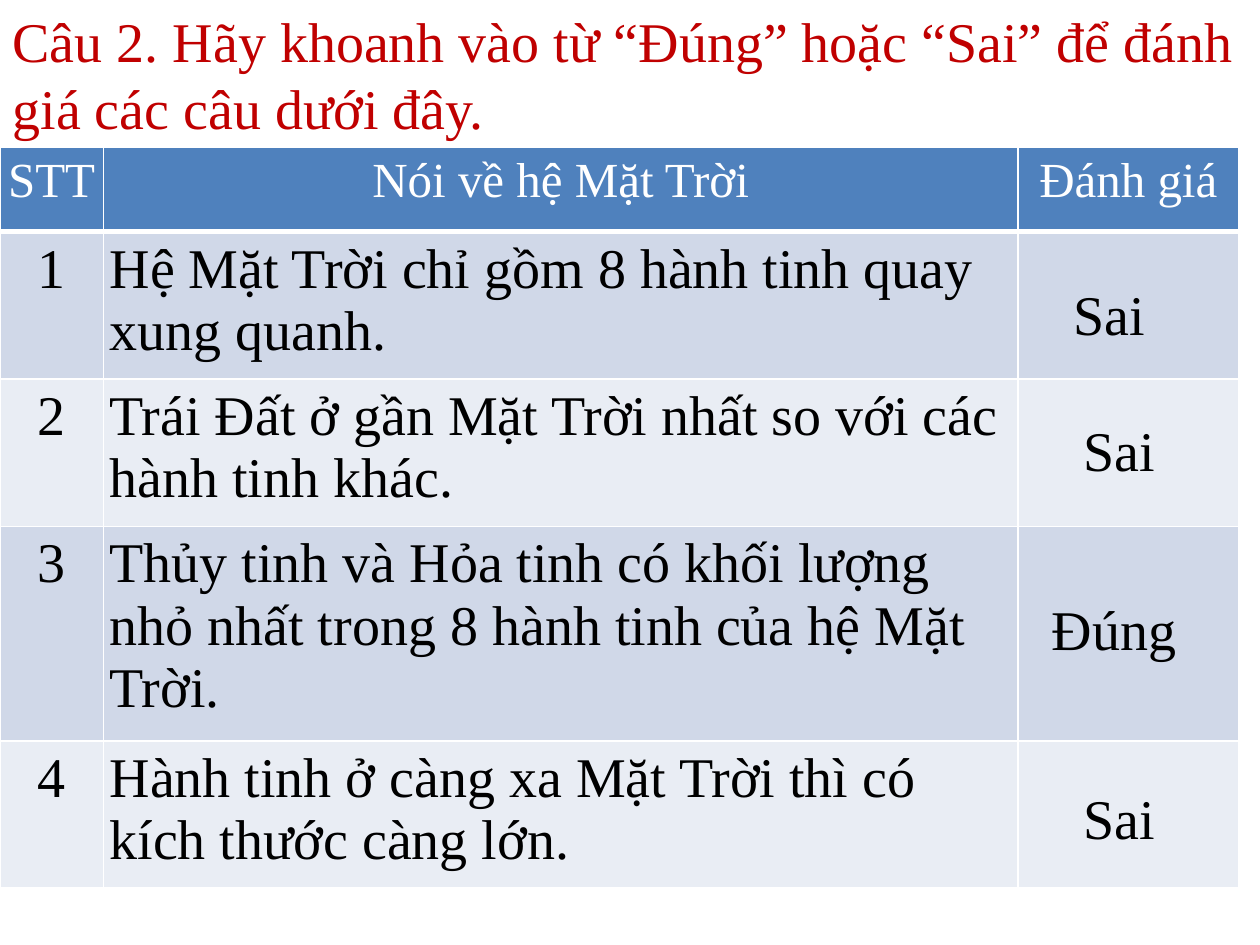
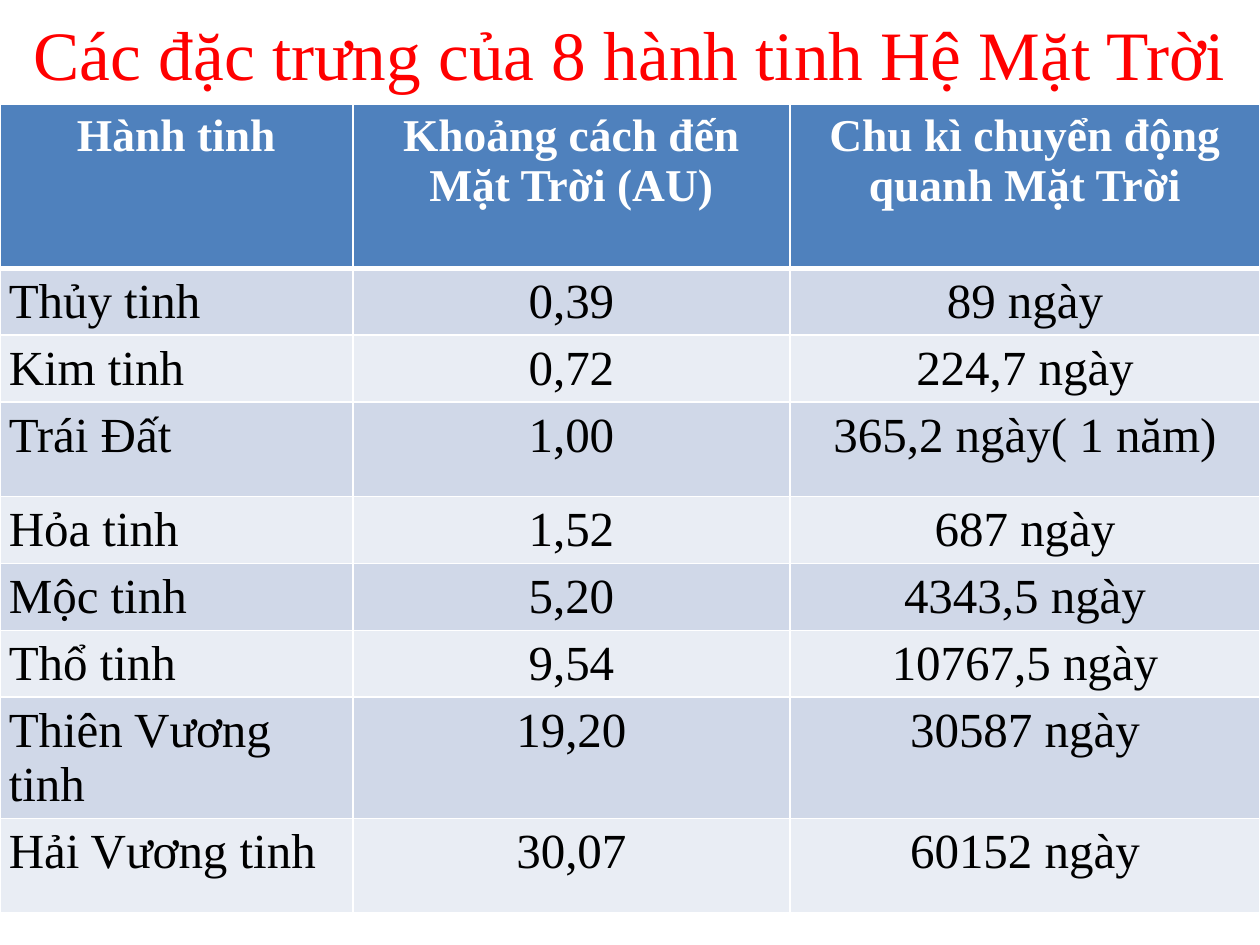
from lxml import etree
from pptx import Presentation
from pptx.dml.color import RGBColor
from pptx.enum.text import MSO_ANCHOR, MSO_AUTO_SIZE, PP_ALIGN
from pptx.oxml.ns import qn
from pptx.util import Inches, Pt

FONT = "Times New Roman"
COLORS = {
    "question": "C00000",
    "heading": "FF0000",
    "header": "4F81BD",
    "odd_row": "D0D8E8",
    "even_row": "E9EDF4",
    "white": "FFFFFF",
    "black": "000000",
}

STATEMENTS = [
    ("STT", "Nói về hệ Mặt Trời", "Đánh giá"),
    ("1", "Hệ Mặt Trời chỉ gồm 8 hành tinh quay xung quanh.", ""),
    ("2", "Trái Đất ở gần Mặt Trời nhất so với các hành tinh khác.", ""),
    ("3", "Thủy tinh và Hỏa tinh có khối lượng nhỏ nhất trong 8 hành tinh "
          "của hệ Mặt Trời.", ""),
    ("4", "Hành tinh ở càng xa Mặt Trời thì có kích thước càng lớn.", ""),
]
ANSWERS = [
    ("Sai", 8.42, 2.17, 0.89),
    ("Sai", 8.5, 3.25, 0.89),
    ("Đúng", 8.25, 4.67, 1.31),
    ("Sai", 8.5, 6.17, 0.89),
]
PLANETS = [
    ("Hành tinh", "Khoảng cách đến Mặt Trời (AU)", "Chu kì chuyển động quanh Mặt Trời"),
    ("Thủy tinh", "0,39", "89 ngày"),
    ("Kim tinh", "0,72", "224,7 ngày"),
    ("Trái Đất", "1,00", "365,2 ngày( 1 năm)"),
    ("Hỏa tinh", "1,52", "687 ngày"),
    ("Mộc tinh", "5,20", "4343,5 ngày"),
    ("Thổ tinh", "9,54", "10767,5 ngày"),
    ("Thiên Vương tinh", "19,20", "30587 ngày"),
    ("Hải Vương tinh", "30,07", "60152 ngày"),
]


def write_text(text_frame, text, size=32, color="black", bold=False, align=PP_ALIGN.LEFT):
    paragraph = text_frame.paragraphs[0]
    paragraph.alignment = align
    run = paragraph.add_run()
    run.text = text
    run.font.name = FONT
    run.font.size = Pt(size)
    run.font.bold = bold
    run.font.color.rgb = RGBColor.from_string(COLORS[color])


def place_title(slide, text, height, anchor, **text_format):
    title = slide.shapes.title
    title.left, title.top = Inches(0), Inches(0)
    title.width, title.height = Inches(10), Inches(height)
    title.text_frame.word_wrap = True
    title.text_frame.auto_size = MSO_AUTO_SIZE.NONE
    title.text_frame.vertical_anchor = anchor
    write_text(title.text_frame, text, **text_format)


def add_answer(slide, text, left, top, width):
    box = slide.shapes.add_textbox(Inches(left), Inches(top), Inches(width), Inches(0.64))
    box.text_frame.word_wrap = True
    write_text(box.text_frame, text)


def set_borders(cell, top, bottom):
    """Draw white cell borders; top and bottom are widths in points."""
    properties = cell._tc.get_or_add_tcPr()
    for side, width in (("L", 1), ("R", 1), ("T", top), ("B", bottom)):
        line = etree.SubElement(properties, qn(f"a:ln{side}"), w=str(Pt(width)))
        fill = etree.SubElement(line, qn("a:solidFill"))
        etree.SubElement(fill, qn("a:srgbClr"), val=COLORS["white"])


def add_banded_table(slide, rows, top, column_widths, row_heights, side_margin,
                     centred_columns, header_format, body_format):
    frame = slide.shapes.add_table(
        len(rows), len(column_widths), Inches(0), Inches(top),
        Inches(sum(column_widths)), Inches(sum(row_heights)))
    table = frame.table
    for column, width in zip(table.columns, column_widths):
        column.width = Inches(width)
    for row, height in zip(table.rows, row_heights):
        row.height = Inches(height)

    for row_index, values in enumerate(rows):
        is_header = row_index == 0
        band = "header" if is_header else "odd_row" if row_index % 2 else "even_row"
        text_format = header_format if is_header else body_format
        for column_index, value in enumerate(values):
            cell = table.cell(row_index, column_index)
            cell.margin_left = cell.margin_right = Inches(side_margin)
            cell.margin_top = cell.margin_bottom = Inches(0.05)
            set_borders(cell, top=3 if row_index == 1 else 1, bottom=3 if is_header else 1)
            cell.fill.solid()
            cell.fill.fore_color.rgb = RGBColor.from_string(COLORS[band])
            if value:
                centred = is_header or column_index in centred_columns
                write_text(cell.text_frame, value,
                           align=PP_ALIGN.CENTER if centred else PP_ALIGN.LEFT,
                           **text_format)


def build_question_slide(slide):
    place_title(slide, "Câu 2. Hãy khoanh vào từ “Đúng” hoặc “Sai” để đánh giá "
                       "các câu dưới đây.",
                height=1.78, anchor=MSO_ANCHOR.TOP, color="question")
    add_banded_table(
        slide, STATEMENTS, top=1.17, column_widths=[0.82, 7.26, 1.75],
        row_heights=[0.67, 1.17, 1.17, 1.7, 1.17], side_margin=0.05,
        centred_columns={0}, header_format={"size": 28, "color": "white"},
        body_format={"size": 32})
    for answer in ANSWERS:
        add_answer(slide, *answer)


def build_planet_slide(slide):
    place_title(slide, "Các đặc trưng của 8 hành tinh Hệ Mặt Trời", height=0.83,
                anchor=MSO_ANCHOR.MIDDLE, size=39.6, color="heading",
                align=PP_ALIGN.CENTER)
    single, spaced = 0.53, 0.75
    add_banded_table(
        slide, PLANETS, top=0.83, column_widths=[2.8, 3.47, 3.73],
        row_heights=[1.3, single, single, spaced, single, single, single, 0.96, spaced],
        side_margin=0.07, centred_columns={1, 2},
        header_format={"size": 26, "color": "white", "bold": True},
        body_format={"size": 28})


def main():
    presentation = Presentation()
    presentation.slide_width = Inches(10)
    presentation.slide_height = Inches(7.5)
    title_only = presentation.slide_layouts[5]
    for build_slide in (build_question_slide, build_planet_slide):
        build_slide(presentation.slides.add_slide(title_only))
    presentation.save("out.pptx")


if __name__ == "__main__":
    main()
